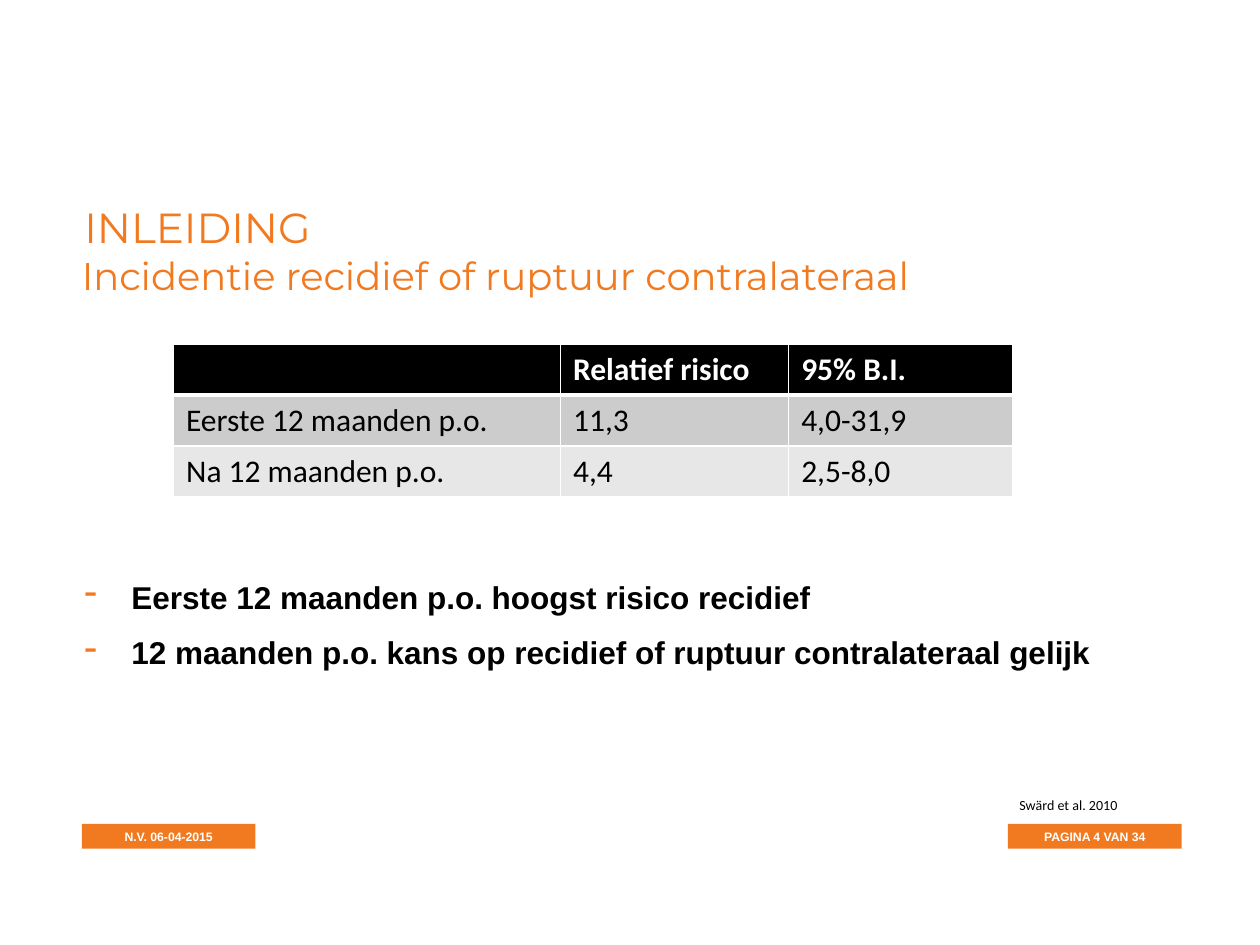
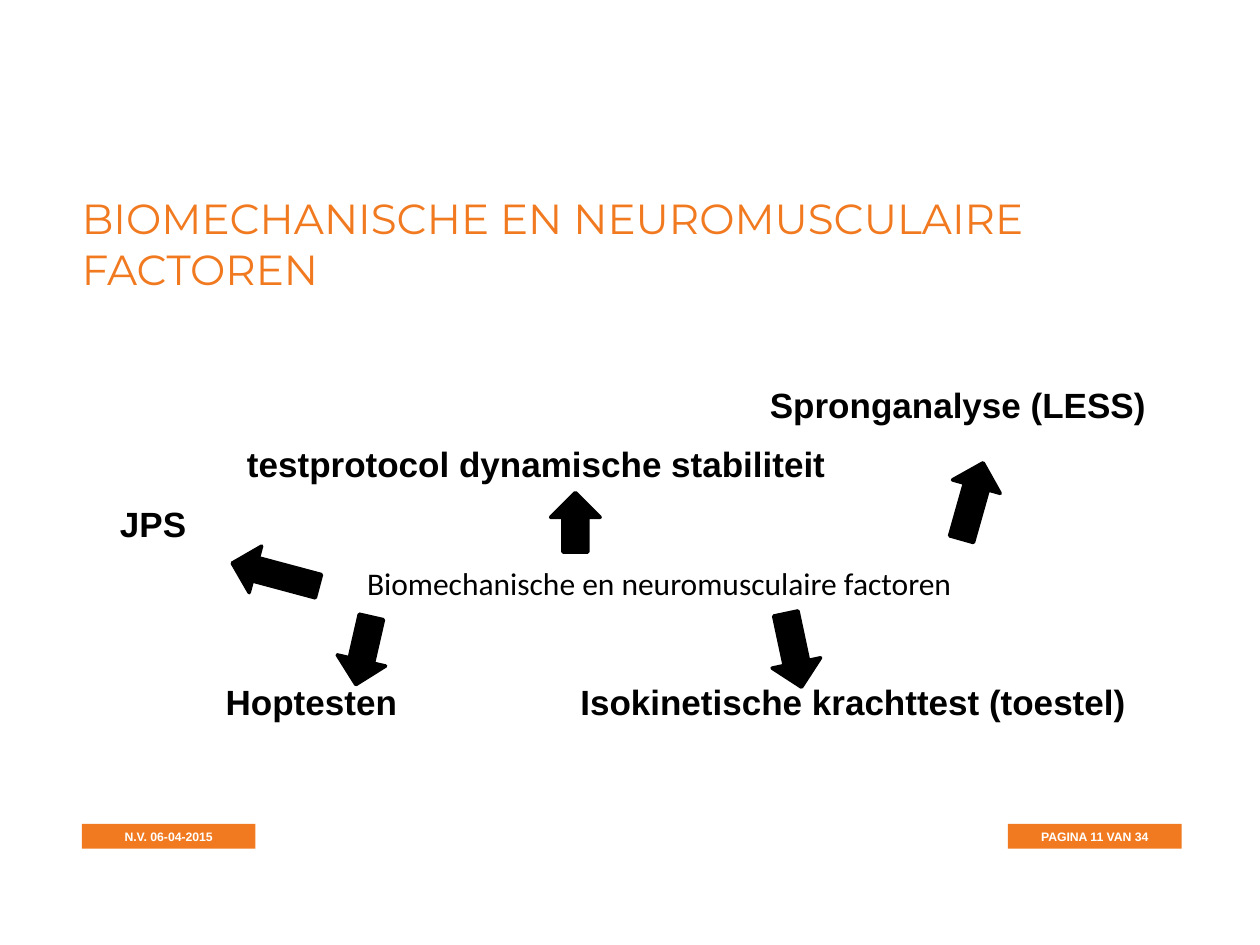
from lxml.etree import SubElement
from pptx import Presentation
from pptx.dml.color import RGBColor
from pptx.enum.shapes import MSO_SHAPE as SHAPE
from pptx.enum.text import MSO_ANCHOR as ANCHOR, PP_ALIGN as ALIGN
from pptx.oxml.ns import qn
from pptx.util import Cm, Pt

ORANGE = RGBColor(0xF1, 0x7A, 0x20)
BLACK = RGBColor(0x00, 0x00, 0x00)
WHITE = RGBColor(0xFF, 0xFF, 0xFF)
DARK_ROW = RGBColor(0xCC, 0xCC, 0xCC)
LIGHT_ROW = RGBColor(0xE7, 0xE7, 0xE7)
ROW_FILLS = (BLACK, DARK_ROW, LIGHT_ROW)

TITLE_FONT, BODY_FONT, NOTE_FONT = "Montserrat", "Arial", "Calibri"
MARGIN = 1.65
CONTENT_W = 22.23
TOTAL_PAGES = 34
DATE_LABEL = "N.V. 06-04-2015"


def add_run(p, text, size, font, color=BLACK, bold=False):
    r = p.add_run()
    r.text = text
    r.font.size = Pt(size)
    r.font.name = font
    r.font.bold = bold
    r.font.color.rgb = color


def set_frame(tf, anchor=ANCHOR.TOP, wrap=True, pad_x=0, pad_y=0):
    tf.word_wrap = wrap
    tf.vertical_anchor = anchor
    tf.margin_left = tf.margin_right = Cm(pad_x)
    tf.margin_top = tf.margin_bottom = Cm(pad_y)
    return tf


def add_text_frame(slide, box, **frame):
    sp = slide.shapes.add_textbox(*map(Cm, box))
    return set_frame(sp.text_frame, **frame)


def add_solid(slide, kind, box, color):
    sp = slide.shapes.add_shape(kind, *map(Cm, box))
    sp.shadow.inherit = False
    sp.fill.solid()
    sp.fill.fore_color.rgb = color
    sp.line.fill.background()
    return sp


def add_heading(slide, text, left, top, size=24):
    tf = add_text_frame(slide, (left, top, CONTENT_W, 1.2), pad_y=0.13)
    add_run(tf.paragraphs[0], text, size, TITLE_FONT, ORANGE)


def add_footer(slide, page):
    labels = ((20.32, f"PAGINA {page} VAN {TOTAL_PAGES}"), (MARGIN, DATE_LABEL))
    for left, text in labels:
        sp = add_solid(slide, SHAPE.RECTANGLE, (left, 16.61, 3.5, 0.5), ORANGE)
        p = set_frame(sp.text_frame, ANCHOR.MIDDLE, pad_x=0.25).paragraphs[0]
        p.alignment = ALIGN.CENTER
        add_run(p, text, 7, BODY_FONT, WHITE, True)


def set_borders(cell, bottom):
    """White borders; bottom is the width in points of the lower one."""
    tcPr = cell._tc.get_or_add_tcPr()
    for side, width in (("L", 1), ("R", 1), ("T", 1), ("B", bottom)):
        ln = SubElement(tcPr, qn(f"a:ln{side}"), w=str(Pt(width)))
        fill = SubElement(ln, qn("a:solidFill"))
        SubElement(fill, qn("a:srgbClr"), val=str(WHITE))


def add_risk_table(slide, left, top):
    rows = (
        ("", "Relatief risico", "95% B.I."),
        ("Eerste 12 maanden p.o.", "11,3", "4,0-31,9"),
        ("Na 12 maanden p.o.", "4,4", "2,5-8,0"),
    )
    widths = (7.8, 4.6, 4.52)
    row_h = 1.03
    box = (left, top, sum(widths), row_h * len(rows))
    table = slide.shapes.add_table(len(rows), len(widths), *map(Cm, box)).table
    for column, width in zip(table.columns, widths):
        column.width = Cm(width)
    for i, texts in enumerate(rows):
        header = i == 0
        table.rows[i].height = Cm(row_h)
        for j, text in enumerate(texts):
            cell = table.cell(i, j)
            set_borders(cell, 3 if header else 1)
            cell.fill.solid()
            cell.fill.fore_color.rgb = ROW_FILLS[i]
            if text:
                add_run(cell.text_frame.paragraphs[0], text, 18, NOTE_FONT,
                        WHITE if header else BLACK, header)


def add_dash(p):
    """Give the paragraph an orange dash and a hanging indent."""
    pPr = p._p.get_or_add_pPr()
    pPr.set("marL", str(Cm(0.95)))
    pPr.set("indent", str(-Cm(0.95)))
    color = SubElement(pPr, qn("a:buClr"))
    SubElement(color, qn("a:srgbClr"), val=str(ORANGE))
    SubElement(pPr, qn("a:buSzPct"), val="120000")
    SubElement(pPr, qn("a:buChar"), char="-")


def add_conclusions(slide, box):
    points = (
        "Eerste 12 maanden p.o. hoogst risico recidief",
        "12 maanden p.o. kans op recidief of ruptuur contralateraal gelijk",
    )
    tf = add_text_frame(slide, box)
    for i, text in enumerate(points):
        p = tf.add_paragraph() if i else tf.paragraphs[0]
        add_dash(p)
        p.space_before = Pt(4 if i else 0)
        p.space_after = Pt(6)
        add_run(p, text, 18, BODY_FONT, bold=True)


def add_source(slide, text, box):
    tf = add_text_frame(slide, box, wrap=False, pad_x=0.25, pad_y=0.13)
    add_run(tf.paragraphs[0], text, 8, NOTE_FONT)


def add_factor_map(slide, left, top):
    """Tests around the central theme, on rows of equal height."""
    row_h = 1.2
    tests = (
        ("Spronganalyse (LESS)", 13.87, 0, 8.4),
        ("testprotocol dynamische stabiliteit", 3.33, 1, 12.5),
        ("JPS", 0.77, 2, 2),
        ("Hoptesten", 2.9, 5, 4),
        ("Isokinetische krachttest (toestel)", 10.05, 5, 12.5),
    )
    arrows = (
        (SHAPE.UP_ARROW, (17.45, 1.75, 1, 1.6), 15.8),
        (SHAPE.UP_ARROW, (9.45, 2.38, 1, 1.2), 0),
        (SHAPE.LEFT_ARROW, (3, 3.55, 1.8, 0.97), 15),
        (SHAPE.DOWN_ARROW, (5.18, 4.87, 1, 1.4), 12.9),
        (SHAPE.DOWN_ARROW, (13.85, 4.8, 1, 1.52), 348),
    )
    for text, x, row, width in tests:
        tf = add_text_frame(slide, (left + x, top + row * row_h, width, row_h),
                            anchor=ANCHOR.MIDDLE)
        add_run(tf.paragraphs[0], text, 20, BODY_FONT, bold=True)

    tf = add_text_frame(slide, (left + 5.75, top + 3.6, 12.5, row_h),
                        anchor=ANCHOR.MIDDLE)
    add_run(tf.paragraphs[0], "Biomechanische en neuromusculaire factoren",
            18, NOTE_FONT)

    for kind, (x, y, width, height), angle in arrows:
        sp = add_solid(slide, kind, (left + x, top + y, width, height), BLACK)
        sp.rotation = angle
        sp.line.color.rgb = BLACK
        sp.line.width = Pt(2)


def add_slide(prs, page):
    slide = prs.slides.add_slide(prs.slide_layouts[6])
    add_footer(slide, page)
    return slide


def build_incidence(prs):
    slide = add_slide(prs, 4)
    add_heading(slide, "INLEIDING", 1.7, 3.94)
    add_heading(slide, "Incidentie recidief of ruptuur contralateraal",
                MARGIN, 4.95, 22)
    add_risk_table(slide, 3.5, 6.93)
    add_conclusions(slide, (1.7, 11.65, 21.26, 3))
    add_source(slide, "Swärd et al. 2010", (20.3, 15.93, 2.5, 0.6))


def build_factors(prs):
    slide = add_slide(prs, 11)
    add_heading(slide, "BIOMECHANISCHE EN NEUROMUSCULAIRE FACTOREN",
                MARGIN, 3.76)
    add_factor_map(slide, MARGIN, 7.55)


def main():
    prs = Presentation()
    prs.slide_width, prs.slide_height = Cm(25.4), Cm(19.05)
    build_incidence(prs)
    build_factors(prs)
    prs.save("out.pptx")


if __name__ == "__main__":
    main()
